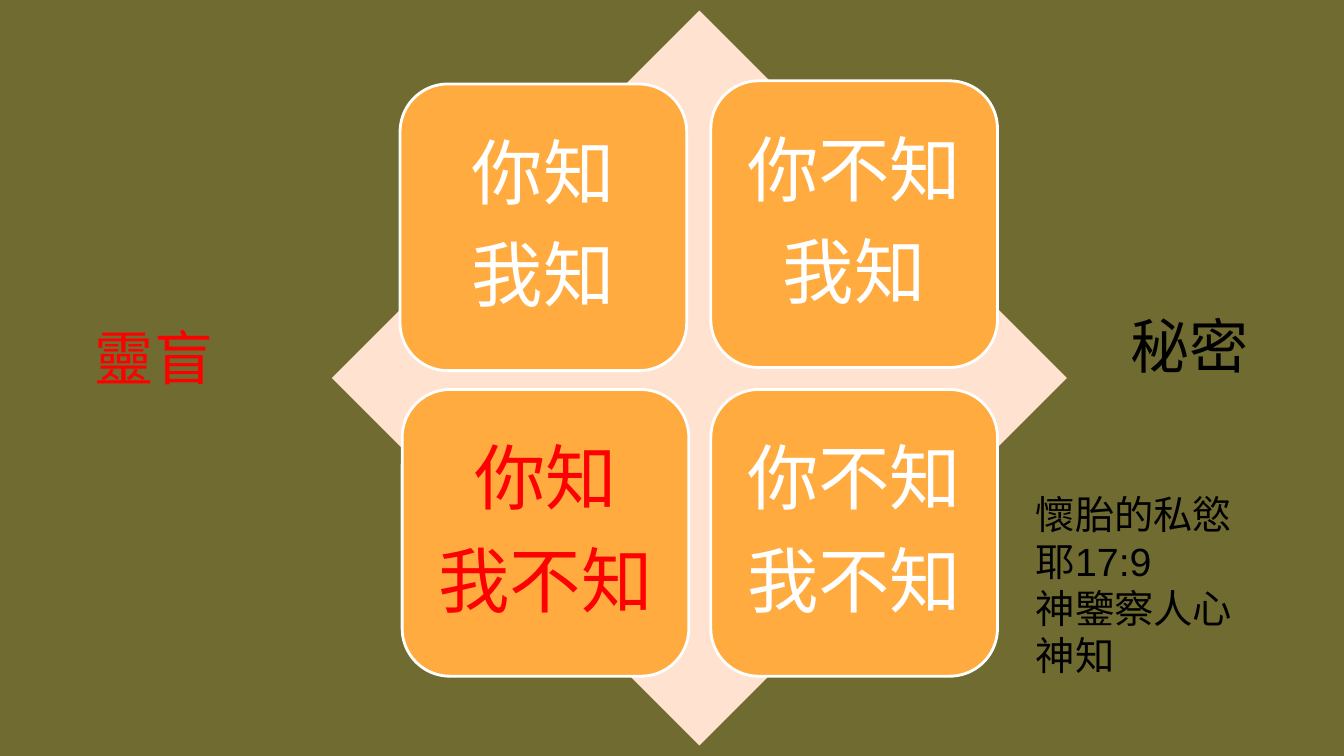
from lxml.etree import SubElement
from pptx import Presentation
from pptx.dml.color import RGBColor
from pptx.enum.shapes import MSO_SHAPE
from pptx.enum.text import MSO_ANCHOR, MSO_AUTO_SIZE, PP_ALIGN
from pptx.oxml.ns import qn
from pptx.util import Pt

PX = 9525
OLIVE = RGBColor(0x6F, 0x6B, 0x31)
PEACH = RGBColor(0xFF, 0xE2, 0xCF)
ORANGE = RGBColor(0xFF, 0xAB, 0x40)
WHITE = RGBColor(0xFF, 0xFF, 0xFF)
RED = RGBColor(0xFF, 0x00, 0x00)
BLACK = RGBColor(0x00, 0x00, 0x00)


def add_panel(preset, left, top, size, color):
    panel = slide.shapes.add_shape(preset, left * PX, top * PX, size * PX, size * PX)
    panel.shadow.inherit = False
    panel.fill.solid()
    panel.fill.fore_color.rgb = color
    panel.line.fill.background()
    return panel


def write_lines(frame, lines, size, color):
    for index, line in enumerate(lines):
        paragraph = frame.paragraphs[0] if index == 0 else frame.add_paragraph()
        run = paragraph.add_run()
        run.text = line
        run.font.name = "Arial"
        run.font.size = Pt(size)
        run.font.color.rgb = color


prs = Presentation()
prs.slide_width = 1280 * PX
prs.slide_height = 720 * PX
slide = prs.slides.add_slide(prs.slide_layouts[6])
slide.background.fill.solid()
slide.background.fill.fore_color.rgb = OLIVE

add_panel(MSO_SHAPE.DIAMOND, 316, 10, 700, PEACH)

quadrants = [
    (381, 80, ["你知", "我知"], WHITE),
    (677, 77, ["你不知", "我知"], WHITE),
    (383, 371, ["你知", "我不知"], RED),
    (677, 371, ["你不知", "我不知"], WHITE),
]
for left, top, lines, color in quadrants:
    quadrant = add_panel(MSO_SHAPE.ROUNDED_RECTANGLE, left, top, 273, ORANGE)
    quadrant.line.color.rgb = WHITE
    quadrant.line.width = Pt(2)
    frame = quadrant.text_frame
    frame.word_wrap = True
    frame.vertical_anchor = MSO_ANCHOR.MIDDLE
    frame.margin_left = frame.margin_right = 19 * PX
    frame.margin_top = frame.margin_bottom = 19 * PX
    write_lines(frame, lines, 51, color)
    for paragraph in frame.paragraphs:
        paragraph.alignment = PP_ALIGN.CENTER
        paragraph.line_spacing = 0.9
        space_after = SubElement(paragraph._p.get_or_add_pPr(), qn("a:spcAft"))
        SubElement(space_after, qn("a:spcPct"), val="35000")

notes = [
    (81, 301, 133, 78, ["靈盲"], 42.2, RED, False),
    (1067, 290, 133, 78, ["秘密"], 42.2, BLACK, False),
    (977, 462, 297, 191, ["懷胎的私慾", "耶17:9", "神鑒察人心", "神知"], 28.1, BLACK, True),
]
for left, top, width, height, lines, size, color, wrap in notes:
    note = slide.shapes.add_textbox(left * PX, top * PX, width * PX, height * PX)
    note.text_frame.word_wrap = wrap
    note.text_frame.auto_size = MSO_AUTO_SIZE.SHAPE_TO_FIT_TEXT
    write_lines(note.text_frame, lines, size, color)

prs.save("out.pptx")
